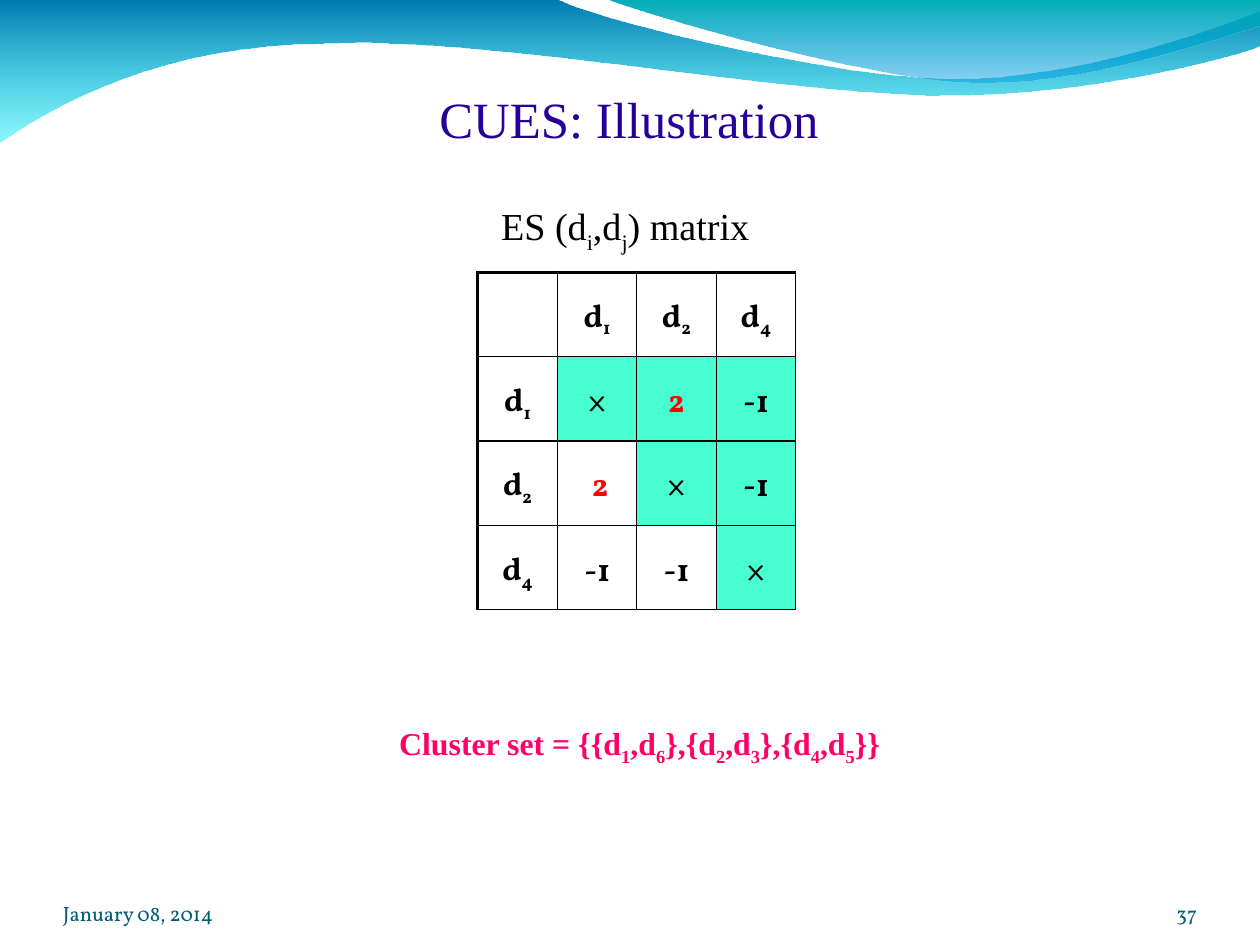
from lxml import etree
from pptx import Presentation
from pptx.dml.color import RGBColor
from pptx.enum.text import MSO_ANCHOR as Anchor, PP_ALIGN as Align
from pptx.oxml.ns import qn
from pptx.util import Cm, Pt

COLOURS = {
    "title": "280099", "black": "000000", "red": "FF0000", "pink": "FF0066",
    "footer": "045C75", "upper": "47FFD1",
    "wave top": "0079AF", "wave bottom": "00EBF8",
    "crest top": "00ADB6", "crest bottom": "009BE5",
}
SERIF, BODY = "Times New Roman", "Vollkorn"


def write(frame, text, font=SERIF, size=20, colour="black", bold=False, align=Align.CENTER,
          anchor=Anchor.TOP, insets=(0.25, 0.13, 0.25, 0.13)):
    """Fill a text frame or cell; the character after each underscore is a subscript."""
    box = frame.text_frame
    box.word_wrap = True
    # A cell carries its own anchor and margins, a shape those of its text frame.
    holder = frame if hasattr(frame, "margin_left") else box
    holder.vertical_anchor = anchor
    holder.margin_left, holder.margin_top, holder.margin_right, holder.margin_bottom = map(Cm, insets)
    para = box.paragraphs[0]
    para.alignment = align
    plain, *indexed = text.split("_")
    pieces = [(plain, False)]
    for piece in indexed:
        pieces += [(piece[0], True), (piece[1:], False)]
    for words, is_subscript in pieces:
        if not words:
            continue
        span = para.add_run()
        span.text = words
        span.font.name, span.font.size, span.font.bold = font, Pt(size), bold
        span.font.color.rgb = RGBColor.from_string(COLOURS[colour])
        if is_subscript:
            span._r.get_or_add_rPr().set("baseline", "-25000")
    return para


deck = Presentation()
deck.slide_width, deck.slide_height = Cm(28), Cm(21)
page = deck.slides.add_slide(deck.slide_layouts[5])

# Header waves: each segment is a line end, or two control points and a curve end
waves = {
    "wave": [
        [(0, 0)], [(12.39, 0)],
        [(13.31, 0.46), (18.59, 1.75), (21.23, 1.75)],
        [(23.9, 1.75), (26.85, 0.71), (28, 0.25)], [(28, 1.02)],
        [(27.53, 1.22), (24.36, 2.13), (20.88, 2.11)],
        [(17.42, 2.11), (10.69, 0.79), (7.21, 0.97)],
        [(3.61, 0.99), (1.27, 2.31), (0, 3.16)],
    ],
    "crest": [
        [(13.5, 0)],
        [(14.27, 0.3), (19.1, 1.73), (21.54, 1.83)],
        [(23.98, 1.93), (26.92, 0.89), (28, 0.58)], [(28, 0)],
    ],
}
for name, segments in waves.items():
    corners = [(Cm(x), Cm(y)) for segment in segments for x, y in segment]
    builder = page.shapes.build_freeform(*corners[0])
    builder.add_line_segments(corners[1:], close=True)
    wave = builder.convert_to_shape()
    # Join the three points of each curved segment into one Bezier curve.
    lines = iter(list(wave.element.iter(qn("a:lnTo"))))
    for segment in segments[1:]:
        parts = [next(lines) for _ in segment]
        if len(parts) == 3:
            curve = etree.Element(qn("a:cubicBezTo"))
            parts[0].addprevious(curve)
            for part in parts:
                curve.append(part[0])
                part.getparent().remove(part)
    wave.shadow.inherit = False
    wave.line.fill.background()
    wave.fill.gradient()
    wave.fill.gradient_angle = 270
    for stop, edge in zip(wave.fill.gradient_stops, ("top", "bottom")):
        stop.color.rgb = RGBColor.from_string(COLOURS[f"{name} {edge}"])
    bottom_colour = list(wave.element.iter(qn("a:srgbClr")))[-1]
    etree.SubElement(bottom_colour, qn("a:alpha"), val="45000")

# Title, in front of the waves
title = page.shapes.title
title.left, title.top, title.width, title.height = Cm(1.4), Cm(2.03), Cm(25.17), Cm(1.27)
write(title, "CUES: Illustration", size=32, colour="title",
      anchor=Anchor.BOTTOM, insets=(0, 0.15, 0, 0))
title.element.getparent().append(title.element)

# Similarity matrix
matrix = [
    ["", "d_1", "d_2", "d_4"],
    ["d_1", "×", "2", "-1"],
    ["d_2", " 2", "×", "-1"],
    ["d_4", "-1", "-1", "×"],
]
size = len(matrix)
table = page.shapes.add_table(size, size, Cm(10.62), Cm(6.05), Cm(7.06), Cm(7.5)).table
table.first_row = table.horz_banding = False

for row_number, values in enumerate(matrix):
    for column_number, value in enumerate(values):
        cell = table.cell(row_number, column_number)
        para = write(cell, value, font=BODY, bold=True,
                     colour="red" if value.strip() == "2" else "black",
                     anchor=Anchor.MIDDLE, insets=(0.25, 0.23, 0.25, 0.13))
        para.line_spacing, para.space_after = 0.86, Pt(14.2)
        thick_sides = {"L": column_number == 0, "R": False, "T": row_number == 0, "B": False}
        properties = cell._tc.get_or_add_tcPr()
        for side, is_thick in thick_sides.items():
            border = etree.SubElement(properties, qn(f"a:ln{side}"), w=str(Pt(2.25 if is_thick else 1)))
            paint = etree.SubElement(border, qn("a:solidFill"))
            etree.SubElement(paint, qn("a:srgbClr"), val=COLOURS["black"])
        if 1 <= row_number <= column_number:
            cell.fill.solid()
            cell.fill.fore_color.rgb = RGBColor.from_string(COLOURS["upper"])
        else:
            cell.fill.background()

# Captions and footer
footer = dict(font=BODY, size=13, colour="footer", anchor=Anchor.BOTTOM, insets=(0, 0, 0, 0))
labels = [
    ("ES (d_i,d_j) matrix", (4.47, 4.37, 18.85, 1.3), dict(size=24)),
    ("Cluster set = {{d_1,d_6},{d_2,d_3},{d_4,d_5}}", (3.42, 15.95, 21.59, 1.12),
     dict(colour="pink", bold=True)),
    ("37", (24.26, 19.46, 2.34, 1.12), dict(footer, align=Align.RIGHT)),
    ("January 08, 2014", (1.4, 19.46, 6.53, 1.12), dict(footer, align=Align.LEFT)),
]
for text, place, style in labels:
    write(page.shapes.add_textbox(*map(Cm, place)), text, **style)

deck.save("out.pptx")
